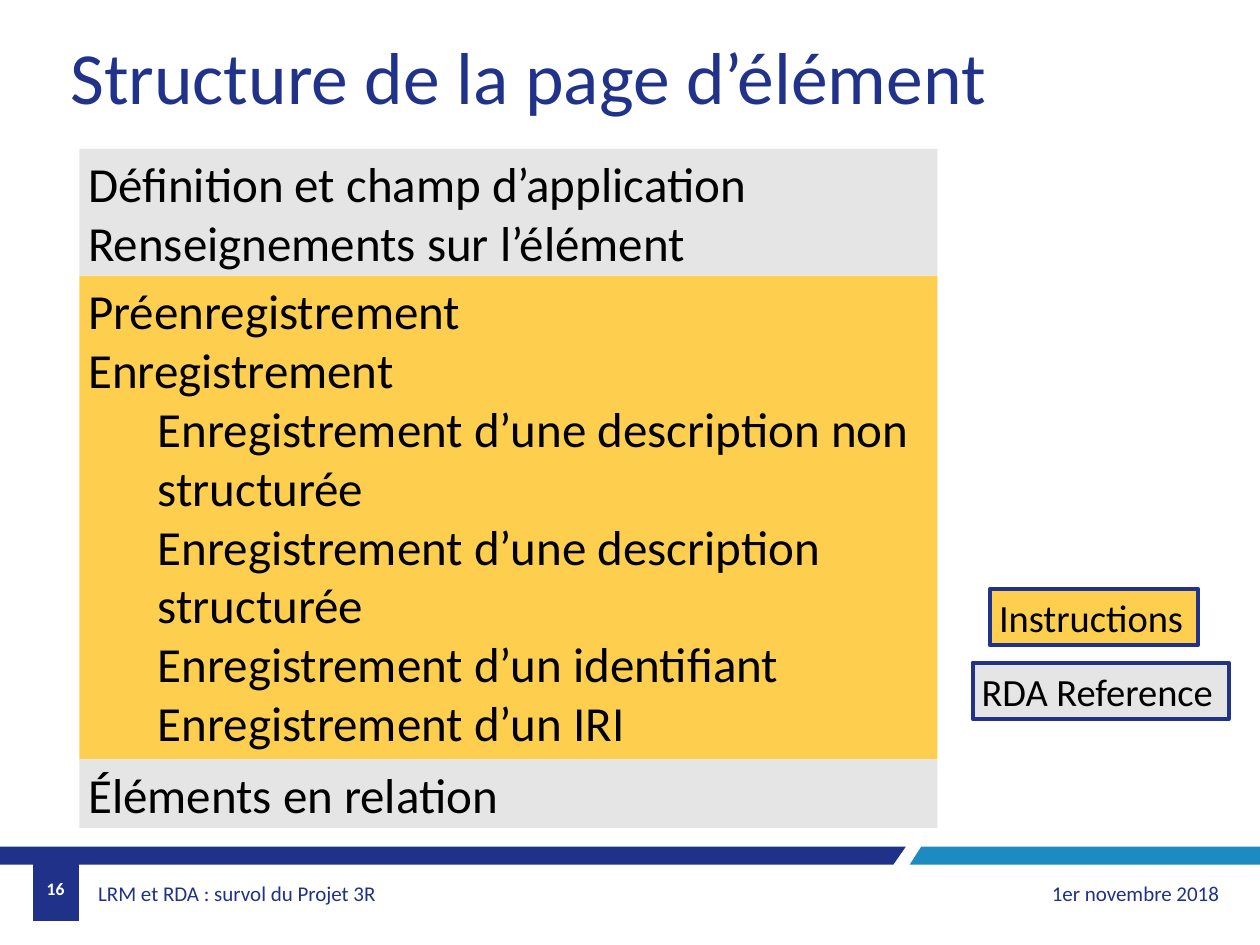
import pptx
import pptx.dml.color
import pptx.enum.shapes
import pptx.enum.text
import pptx.util

Cm = pptx.util.Cm
Align = pptx.enum.text.PP_ALIGN
Anchor = pptx.enum.text.MSO_ANCHOR
COLORS = {"navy": "203189", "ink": "21328A", "blue": "1D8BC1", "grey": "E5E5E5",
          "yellow": "FECE4E", "black": "000000", "white": "FFFFFF"}
BAND_TOP, BAND_BOTTOM = 17.07, 17.43
BLOCK_LEFT, BLOCK_WIDTH = 1.6, 17.3
INDENT = 1.4


def color(name):
    """Return the named colour as an RGB value."""
    return pptx.dml.color.RGBColor.from_string(COLORS[name])


def place(shape, left, top, width, height):
    """Set the position and size of a shape in centimetres."""
    shape.left, shape.top, shape.width, shape.height = map(Cm, (left, top, width, height))


def write(shape, lines, size, ink="black", bold=False, align=Align.LEFT,
          anchor=Anchor.TOP, inset=(0.18, 0.1)):
    """Fill a shape with lines, indenting those that start with a tab."""
    frame = shape.text_frame
    frame.auto_size = pptx.enum.text.MSO_AUTO_SIZE.NONE
    frame.word_wrap = True
    frame.vertical_anchor = anchor
    frame.margin_left = frame.margin_right = Cm(inset[0])
    frame.margin_top = frame.margin_bottom = Cm(inset[1])
    for index, line in enumerate(lines):
        para = frame.add_paragraph() if index else frame.paragraphs[0]
        para.alignment = align
        if line.startswith("\t"):
            para._p.get_or_add_pPr().set("marL", str(Cm(INDENT)))
        span = para.add_run()
        span.text = line.strip()
        span.font.name = "Calibri"
        span.font.size = pptx.util.Pt(size)
        span.font.bold = bold
        span.font.color.rgb = color(ink)


def add_label(page, bounds, text, size, **style):
    """Add a vertically centred text box."""
    box = page.shapes.add_textbox(*map(Cm, bounds))
    write(box, [text], size, anchor=Anchor.MIDDLE, **style)


def add_block(page, bounds, fill, lines, size=28, outlined=False):
    """Add a filled rectangle holding lines of text."""
    block = page.shapes.add_shape(pptx.enum.shapes.MSO_SHAPE.RECTANGLE, *map(Cm, bounds))
    block.shadow.inherit = False
    block.fill.solid()
    block.fill.fore_color.rgb = color(fill)
    if outlined:
        block.line.color.rgb = color("ink")
        block.line.width = pptx.util.Pt(2.25)
    else:
        block.line.fill.background()
    write(block, lines, size)


def add_outline(page, points, fill):
    """Add a filled polygon through the given points."""
    corners = [(Cm(x), Cm(y)) for x, y in points]
    builder = page.shapes.build_freeform(*corners[0])
    builder.add_line_segments(corners[1:], close=True)
    shape = builder.convert_to_shape()
    shape.shadow.inherit = False
    shape.fill.solid()
    shape.fill.fore_color.rgb = color(fill)
    shape.line.fill.background()


def add_footer(page):
    """Draw the footer band, page number tab and labels."""
    add_outline(page, [(18.26, BAND_TOP), (0, BAND_TOP), (0, BAND_BOTTOM),
                       (18.01, BAND_BOTTOM)], "navy")
    add_outline(page, [(25.4, BAND_TOP), (18.57, BAND_TOP), (18.34, BAND_BOTTOM),
                       (25.4, BAND_BOTTOM)], "blue")
    add_outline(page, [(0.66, 18.57), (1.6, 18.57), (1.6, BAND_TOP),
                       (0.66, BAND_TOP)], "navy")
    add_label(page, (1.85, 17.53, 9.8, 0.97), "LRM et RDA : survol du Projet 3R", 12,
              ink="navy", inset=(0.13, 0.08))
    add_label(page, (18.26, 17.53, 6.5, 0.97), "1er novembre 2018", 12,
              ink="navy", align=Align.RIGHT)
    add_label(page, (0.66, 17.43, 0.92, 0.97), "16", 10,
              ink="white", bold=True, align=Align.CENTER)


def main():
    """Build the deck and save it."""
    deck = pptx.Presentation()
    deck.slide_width, deck.slide_height = Cm(25.4), Cm(19.05)
    page = deck.slides.add_slide(deck.slide_layouts[5])
    add_footer(page)
    title = page.shapes.title
    place(title, 1.24, 0.53, 19, 1.98)
    write(title, ["Structure de la page d’élément"], 42, ink="ink")
    blocks = [
        (3, 2.56, "grey", ["Définition et champ d’application",
                           "Renseignements sur l’élément"]),
        (5.56, 9.75, "yellow", ["Préenregistrement", "Enregistrement",
                                "\tEnregistrement d’une description non", "\tstructurée",
                                "\tEnregistrement d’une description", "\tstructurée",
                                "\tEnregistrement d’un identifiant",
                                "\tEnregistrement d’un IRI"]),
        (15.31, 1.38, "grey", ["Éléments en relation"]),
    ]
    for top, height, fill, lines in blocks:
        add_block(page, (BLOCK_LEFT, top, BLOCK_WIDTH, height), fill, lines)
    legend = [(19.96, 11.87, 4.19, "yellow", "Instructions"),
              (19.61, 13.36, 5.16, "grey", "RDA Reference")]
    for left, top, width, fill, text in legend:
        add_block(page, (left, top, width, 1.14), fill, [text], size=22, outlined=True)
    deck.save("out.pptx")


if __name__ == "__main__":
    main()
